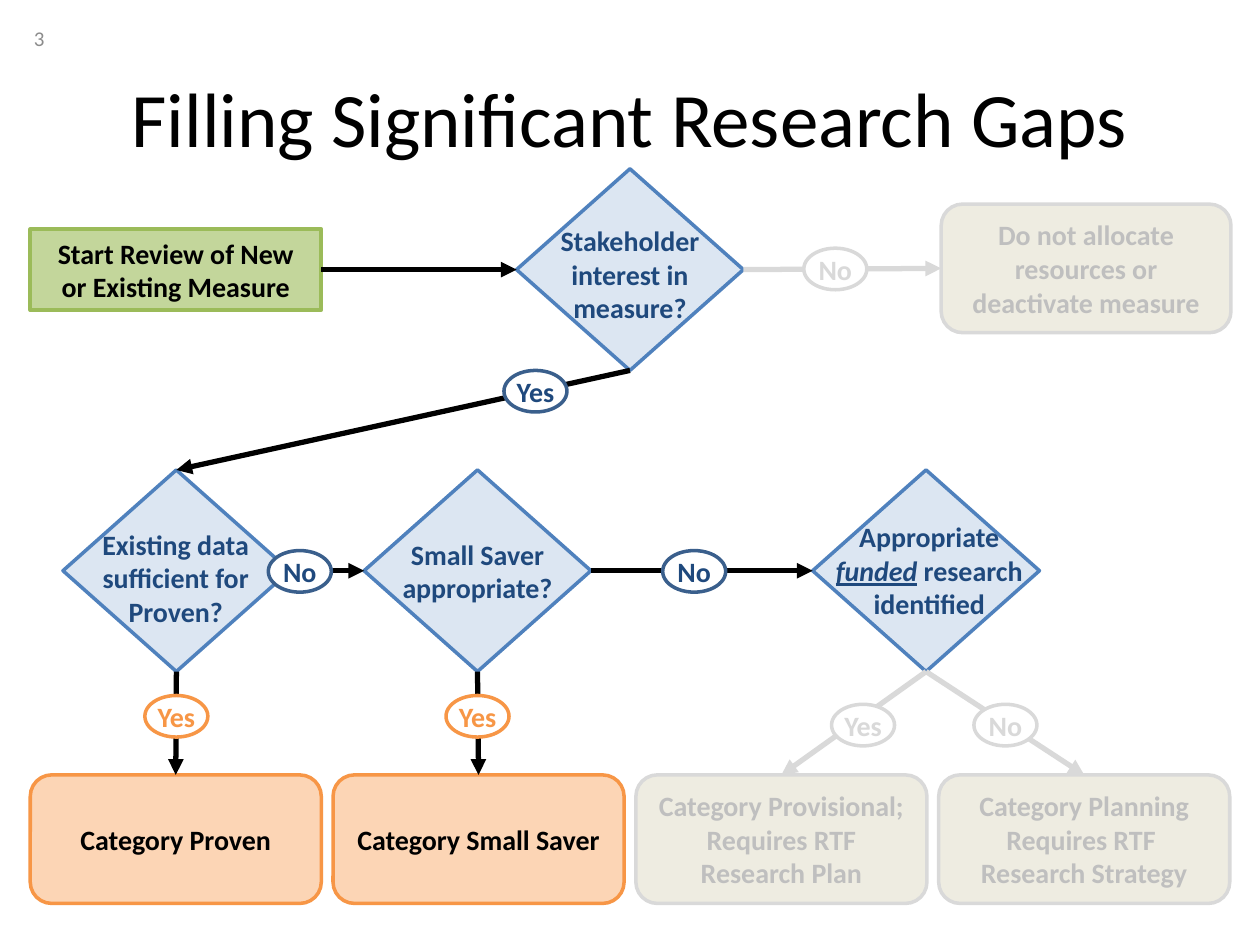
from lxml import etree
from pptx import Presentation
from pptx import util as u
from pptx.dml import color as c
from pptx.enum import shapes, text
from pptx.oxml import ns

SCALE = 9144
FONT = "Calibri"
BLACK, WHITE, NAVY, ORANGE = "000000", "FFFFFF", "1F497D", "F79646"
PALE, FADED, CREAM = "D9D9D9", "BFBFBF", "EEECE1"
TOP, LEFT, BOTTOM, RIGHT = range(4)
KIND = shapes.MSO_SHAPE


def emu(*lengths):
    """Turn px lengths into EMU."""
    return [u.Emu(round(length * SCALE)) for length in lengths]


def rgb(value):
    """Turn a hex string into a colour."""
    return c.RGBColor.from_string(value)


def add_run(paragraph, words, size, color, bold=False, emphasis=False):
    """Add one formatted run."""
    run = paragraph.add_run()
    run.text = words
    font = run.font
    font.name, font.size, font.bold = FONT, u.Pt(size), bold
    font.color.rgb = rgb(color)
    if emphasis:
        font.italic = font.underline = True


def write(shape, lines, color, wrap=True):
    """Write centred bold lines, each a list of runs or of line breaks (None)."""
    frame = shape.text_frame
    frame.word_wrap = wrap
    frame.vertical_anchor = text.MSO_ANCHOR.MIDDLE
    for index, runs in enumerate(lines):
        paragraph = frame.add_paragraph() if index else frame.paragraphs[0]
        paragraph.alignment = text.PP_ALIGN.CENTER
        for words in runs:
            if words is None:
                paragraph.add_line_break()
            else:
                add_run(paragraph, words, 16, color, True, words == "funded")


def add_node(slide, kind, box, fill, line, width=2):
    """Add one filled and outlined shape."""
    shape = slide.shapes.add_shape(kind, *emu(*box))
    shape.shadow.inherit = False
    shape.fill.solid()
    shape.fill.fore_color.rgb = rgb(fill)
    shape.line.color.rgb = rgb(line)
    shape.line.width = u.Pt(width)
    return shape


def add_label(slide, box, runs, color, wrap=True):
    """Add a text box over a shape."""
    write(slide.shapes.add_textbox(*emu(*box)), [runs], color, wrap)


def add_decision(slide, left, top, runs, label):
    """Add a diamond with a label given as offset and size."""
    diamond = add_node(slide, KIND.FLOWCHART_DECISION, (left, top, 180, 160), "DCE6F2", "4F81BD")
    x, y, width, height = label
    add_label(slide, (left + x, top + y, width, height), runs, NAVY)
    return diamond


def add_outcome(slide, box, lines, active):
    """Add a rounded outcome box, active or faded."""
    fill, line, color = ("FCD5B5", ORANGE, BLACK) if active else (CREAM, PALE, FADED)
    outcome = add_node(slide, KIND.FLOWCHART_ALTERNATE_PROCESS, box, fill, line)
    write(outcome, lines, color)
    return outcome


def add_answer(slide, left, top, words, line, color):
    """Add a Yes or No oval."""
    add_node(slide, KIND.FLOWCHART_CONNECTOR, (left, top, 50, 33), WHITE, line)
    add_label(slide, (left, top - 2, 50, 37), [words], color, wrap=False)


def add_arrow(slide, start, start_site, end, end_site, color):
    """Join two shapes with an arrow."""
    connector = slide.shapes.add_connector(shapes.MSO_CONNECTOR.STRAIGHT, 0, 0, 0, 0)
    connector.begin_connect(start, start_site)
    connector.end_connect(end, end_site)
    connector.line.color.rgb = rgb(color)
    connector.line.width = u.Pt(3)
    properties = connector._element.spPr
    outline = properties.find(ns.qn("a:ln"))
    etree.SubElement(outline, ns.qn("a:tailEnd"), type="triangle")
    etree.SubElement(properties, ns.qn("a:effectLst"))


def build_header(slide, box):
    """Place the title and the page number."""
    left, top, width, height = box
    title = slide.shapes.title
    title.left, title.top, title.width, title.height = emu(left + 50, top + 30, width - 100, height - 30)
    title.text_frame.vertical_anchor = text.MSO_ANCHOR.MIDDLE
    paragraph = title.text_frame.paragraphs[0]
    paragraph.alignment = text.PP_ALIGN.CENTER
    add_run(paragraph, "Filling Significant Research Gaps", 44, BLACK)
    number = slide.shapes.add_textbox(*emu(left + 17, top + 10, 233, 40)).text_frame
    number.vertical_anchor = text.MSO_ANCHOR.MIDDLE
    add_run(number.paragraphs[0], "3", 12, "8C8C8C")


def build_screening(slide, box):
    """Place the start, the interest decision and the stop box."""
    left, top, width, height = box
    middle = top + height // 2
    start = add_node(slide, KIND.RECTANGLE, (left, middle - 32, 231, 64), "C3D69B", "9BBB59", 2.25)
    write(start, [["Start Review of New or Existing Measure"]], BLACK)
    interest = add_decision(slide, left + 386, top, ["Stakeholder interest in measure?"], (15, 38, 150, 91))
    stop = add_outcome(slide, (left + width - 230, middle - 52, 230, 102),
                       [["Do not allocate resources or deactivate measure"]], False)
    add_arrow(slide, start, RIGHT, interest, LEFT, BLACK)
    add_arrow(slide, interest, RIGHT, stop, LEFT, PALE)
    add_answer(slide, left + 614, middle - 17, "No", PALE, PALE)
    return interest


def build_assessment(slide, box):
    """Place the row of three assessment decisions."""
    left, top, width, height = box
    rows = [
        (0, ["Existing data sufficient for Proven?"], (6, 40, 167, 91)),
        (239, ["Small Saver appropriate?"], (15, 48, 150, 64)),
        (width - 180, ["Appropriate ", "funded", " research identified"], (5, 34, 175, 91)),
    ]
    decisions = [add_decision(slide, left + x, top, runs, label) for x, runs, label in rows]
    for start, end, x in zip(decisions, decisions[1:], (163, 476)):
        add_arrow(slide, start, RIGHT, end, LEFT, BLACK)
        add_answer(slide, left + x, top + height // 2 - 16, "No", "3A5F8C", NAVY)
    return decisions


def build_outcomes(slide, box):
    """Place four evenly spaced category boxes."""
    left, top, width, height = box
    categories = [
        ([["Category Proven"]], True),
        ([["Category Small Saver"]], True),
        ([["Category Provisional; Requires RTF Research Plan"]], False),
        ([["Category Planning"], ["Requires RTF ", None, "Research Strategy"]], False),
    ]
    pitch = (width - 231) / (len(categories) - 1)
    return [add_outcome(slide, (left + index * pitch, top, 231, height), lines, active)
            for index, (lines, active) in enumerate(categories)]


def build_branches(slide, interest, decisions, outcomes):
    """Join the rows with arrows and their answers."""
    proven, saver, funded = decisions
    add_arrow(slide, interest, BOTTOM, proven, TOP, BLACK)
    add_answer(slide, 400, 294, "Yes", "3A5F8C", NAVY)
    branches = [
        (proven, BLACK, 115, 552, "Yes", ORANGE),
        (saver, BLACK, 354, 552, "Yes", ORANGE),
        (funded, PALE, 660, 559, "Yes", PALE),
        (funded, PALE, 773, 559, "No", PALE),
    ]
    for outcome, (decision, line, left, top, words, color) in zip(outcomes, branches):
        add_arrow(slide, decision, BOTTOM, outcome, TOP, line)
        add_answer(slide, left, top, words, color, color)


def main():
    """Build and save the slide."""
    presentation = Presentation()
    presentation.slide_width, presentation.slide_height = emu(1000, 750)
    slide = presentation.slides.add_slide(presentation.slide_layouts[5])
    build_header(slide, (0, 0, 1000, 155))
    interest = build_screening(slide, (24, 134, 953, 160))
    decisions = build_assessment(slide, (50, 373, 775, 160))
    outcomes = build_outcomes(slide, (24, 615, 952, 102))
    build_branches(slide, interest, decisions, outcomes)
    presentation.save("out.pptx")


if __name__ == "__main__":
    main()
